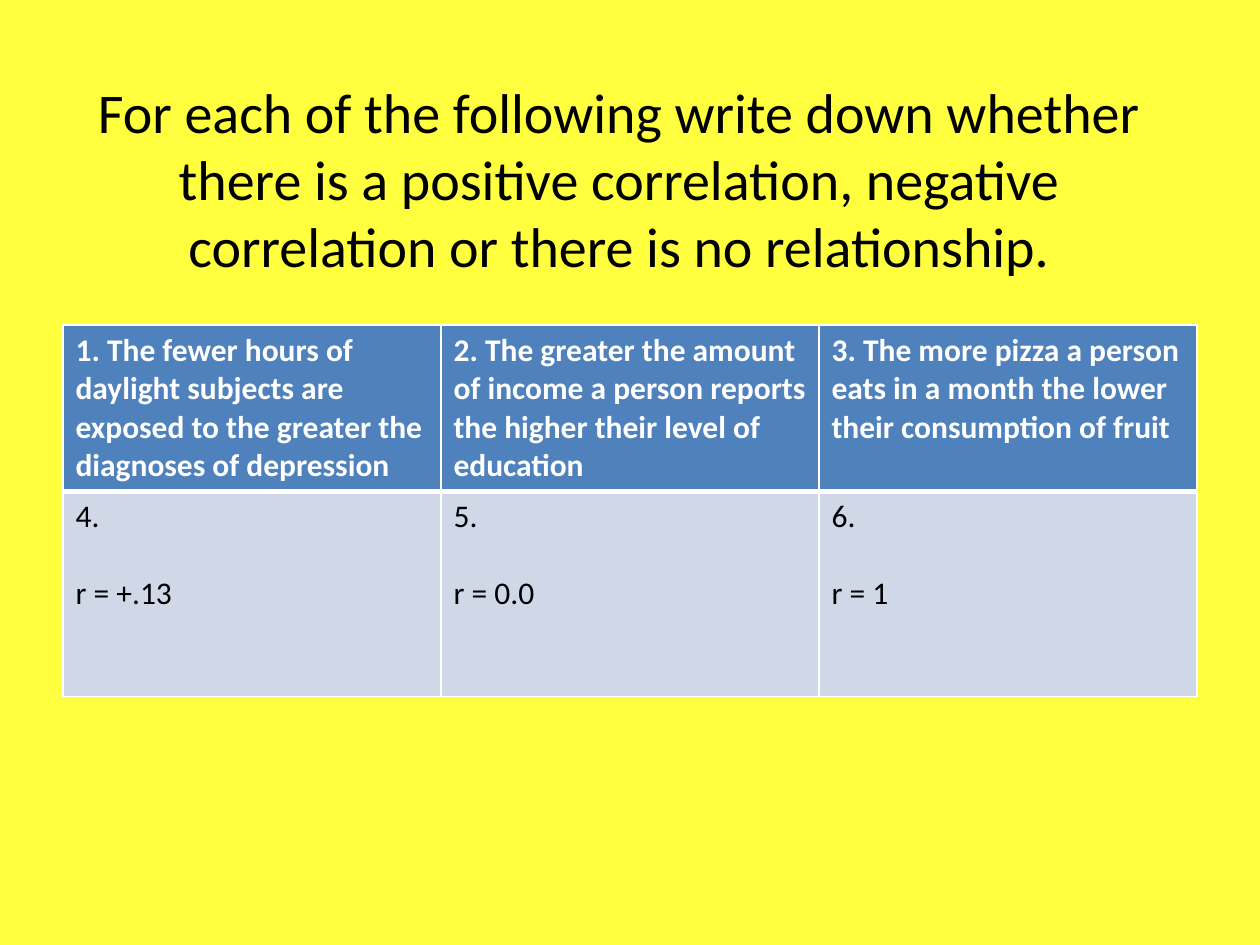
import pptx
import pptx.dml.color
import pptx.enum.text
import pptx.oxml
import pptx.oxml.ns
import pptx.util

Inches = pptx.util.Inches
Pt = pptx.util.Pt

TITLE = ("For each of the following write down whether there is a positive correlation, "
         "negative correlation or there is no relationship.")
STATEMENTS = [
    "1. The fewer hours of daylight subjects are exposed to the greater the diagnoses of depression",
    "2. The greater the amount of income a person reports the higher their level of education",
    "3. The more pizza a person eats in a month the lower their consumption of fruit",
]
COEFFICIENTS = [("4.", "r = +.13"), ("5.", "r = 0.0"), ("6.", "r = 1")]


def paint(fill, color):
    fill.solid()
    fill.fore_color.rgb = pptx.dml.color.RGBColor.from_string(color)


def add_run(p, text, size, color, bold=False):
    r = p.add_run()
    r.text = text
    r.font.name = "Calibri"
    r.font.size = Pt(size)
    r.font.bold = bold
    paint(r.font.fill, color)


def set_borders(cell, **widths):
    tc_pr = cell._tc.get_or_add_tcPr()
    for side in ("L", "R", "T", "B"):
        width = Pt(widths.get(side, 1))
        tc_pr.append(pptx.oxml.parse_xml(
            f'<a:ln{side} {pptx.oxml.ns.nsdecls("a")} w="{width}"><a:solidFill>'
            f'<a:srgbClr val="FFFFFF"/></a:solidFill></a:ln{side}>'))


def add_title(s, left, top, width, height):
    tf = s.shapes.add_textbox(left, top, width, height).text_frame
    tf.word_wrap = True
    tf.vertical_anchor = pptx.enum.text.MSO_ANCHOR.MIDDLE
    p = tf.paragraphs[0]
    p.alignment = pptx.enum.text.PP_ALIGN.CENTER
    add_run(p, TITLE, 32, "000000")


def add_questions(s, left, top, width, height):
    table = s.shapes.add_table(2, len(STATEMENTS), left, top, width, height).table
    header_height = Inches(1.32)
    table.rows[0].height = header_height
    table.rows[1].height = height - header_height
    for col, (statement, (number, value)) in enumerate(zip(STATEMENTS, COEFFICIENTS)):
        header, body = table.cell(0, col), table.cell(1, col)
        set_borders(header, B=3)
        paint(header.fill, "4F81BD")
        add_run(header.text_frame.paragraphs[0], statement, 18, "FFFFFF", True)
        set_borders(body, T=3)
        paint(body.fill, "D0D8E8")
        add_run(body.text_frame.paragraphs[0], number, 18, "000000")
        p = body.text_frame.add_paragraph()
        p.space_before = Pt(22)
        add_run(p, value, 18, "000000")


def main():
    prs = pptx.Presentation()
    prs.slide_width = Inches(10)
    prs.slide_height = Inches(7.5)
    s = prs.slides.add_slide(prs.slide_layouts[6])
    paint(s.background.fill, "FFFF40")
    add_title(s, Inches(0.33), Inches(0.5), Inches(9.17), Inches(1.83))
    add_questions(s, Inches(0.5), Inches(2.58), Inches(9), Inches(2.95))
    prs.save("out.pptx")


if __name__ == "__main__":
    main()
